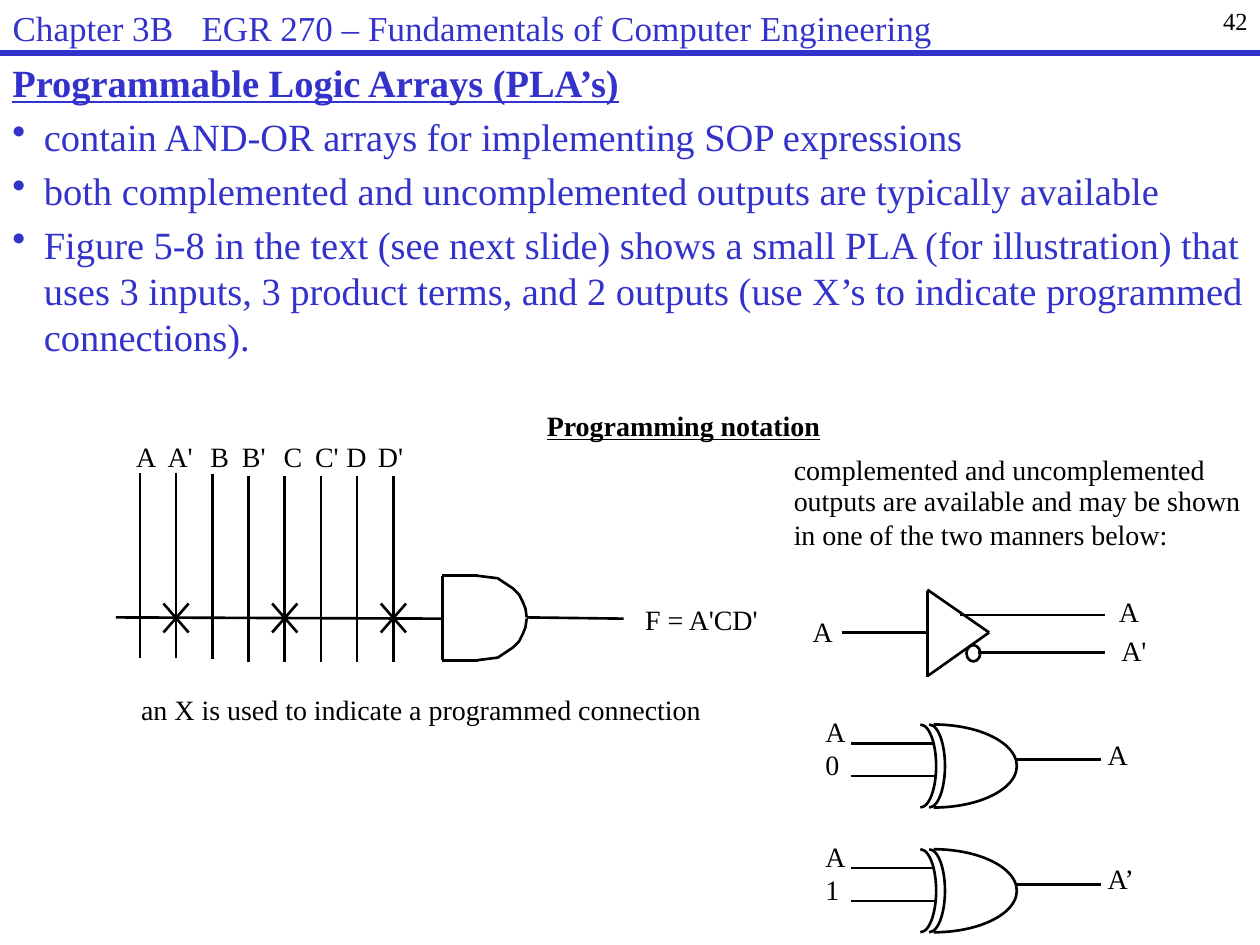
"""Build the slide on programmable logic arrays and their programming notation."""
from dataclasses import dataclass

import pptx
import pptx.dml.color
import pptx.enum.shapes
import pptx.enum.text
import pptx.oxml
import pptx.util
from pptx.util import Inches

SHAPE = pptx.enum.shapes.MSO_SHAPE
ALIGN = pptx.enum.text.PP_ALIGN


@dataclass(frozen=True)
class Theme:
    font: str = "Times New Roman"
    blue: str = "3333CC"
    black: str = "000000"
    body: int = 22
    title: int = 20
    label: int = 16
    number: int = 14
    thin: float = 1.5
    thick: float = 3


@dataclass(frozen=True)
class Label:
    text: str
    x: float
    y: float
    w: float
    strong: bool = False


@dataclass(frozen=True)
class Wire:
    x1: float
    y1: float
    x2: float
    y2: float


@dataclass(frozen=True)
class XorGate:
    top: float
    inputs: str
    output: str
    output_w: float


THEME = Theme()
BODY = [
    "Programmable Logic Arrays (PLA’s)",
    "contain AND-OR arrays for implementing SOP expressions",
    "both complemented and uncomplemented outputs are typically available",
    "Figure 5-8 in the text (see next slide) shows a small PLA (for illustration) that "
    "uses 3 inputs, 3 product terms, and 2 outputs (use X’s to indicate programmed connections).",
]
COLUMNS = [("A", 1.08, 0.16), ("A'", 1.33, 0.2), ("B", 1.67, 0.15), ("B'", 1.92, 0.19),
           ("C", 2.25, 0.15), ("C'", 2.5, 0.19), ("D", 2.75, 0.16), ("D'", 3, 0.2)]
COLUMN_TOPS = [3.75, 3.75, 3.76] + [3.78] * 5
PROGRAMMED = (1, 4, 7)
PRODUCT_Y = 4.9
LABELS = [
    Label("Programming notation", 4.34, 3.24, 2.2, True),
    Label("complemented and uncomplemented", 6.3, 3.59, 3.31),
    Label("outputs are available and may be shown\nin one of the two manners below:", 6.3, 3.84, 3.6),
    Label("F = A'CD'", 5.12, 4.78, 0.9),
    Label("an X is used to indicate a programmed connection", 1.12, 5.5, 4.52),
    Label("A", 6.45, 4.88, 0.16),
    Label("A", 8.88, 4.72, 0.16),
    Label("A'", 8.9, 5.03, 0.2),
]
AND_WIRES = [
    Wire(0.92, PRODUCT_Y, 3.51, 4.91), Wire(4.18, PRODUCT_Y, 4.95, 4.91),
    Wire(3.51, 5.24, 3.51, 4.57), Wire(3.51, 4.57, 3.79, 4.57), Wire(3.51, 5.24, 3.79, 5.24),
]
AND_CURVE = [(3.79, 4.57), (3.95, 4.59), (4.07, 4.67), (4.12, 4.72),
             (4.15, 4.78), (4.17, 4.83), (4.18, PRODUCT_Y)]
BUFFER_WIRES = [
    Wire(6.68, 5.02, 7.36, 5.02), Wire(7.36, 5.37, 7.36, 4.69), Wire(7.36, 4.68, 7.85, 5.02),
    Wire(7.37, 5.36, 7.85, 5.02), Wire(7.62, 4.88, 8.77, 4.88), Wire(7.76, 5.18, 8.77, 5.18),
]
XOR_GATES = [XorGate(5.75, "A\n0", "A", 0.16), XorGate(6.74, "A\n1", "A’", 0.21)]


def rgb(color: str) -> pptx.dml.color.RGBColor:
    """Turn a hex string into a colour."""
    return pptx.dml.color.RGBColor.from_string(color)


def style(p, size: int, color: str, strong: bool = False) -> None:
    """Format all runs of a paragraph."""
    for r in p.runs:
        r.font.name, r.font.size = THEME.font, pptx.util.Pt(size)
        r.font.color.rgb = rgb(color)
        r.font.bold = r.font.underline = strong


def set_properties(p, left: float, hanging: float, tab: float, bullet: bool = False) -> None:
    """Set indents, a tab stop and an optional bullet."""
    pPr = p._p.get_or_add_pPr()
    pPr.set("marL", str(Inches(left)))
    pPr.set("indent", str(-Inches(hanging)))
    if bullet:
        pptx.oxml.ns and pPr.append(element('<a:buChar {} char="•"/>'))
    pPr.append(element(f'<a:tabLst {{}}><a:tab pos="{Inches(tab)}" algn="l"/></a:tabLst>'))


def element(xml: str):
    """Parse a drawing element that has a slot for its namespace."""
    return pptx.oxml.parse_xml(xml.format(pptx.oxml.ns.nsdecls("a")))


def add_wire(s, wire: Wire, color: str = THEME.black, width: float = THEME.thin) -> None:
    """Draw a straight line."""
    ends = map(Inches, (wire.x1, wire.y1, wire.x2, wire.y2))
    line = s.shapes.add_connector(pptx.enum.shapes.MSO_CONNECTOR.STRAIGHT, *ends)
    line.line.color.rgb, line.line.width = rgb(color), pptx.util.Pt(width)
    line._element.spPr.append(element("<a:effectLst {}/>"))


def outline(sp) -> None:
    """Give a shape a thin black outline only."""
    sp.shadow.inherit = False
    sp.fill.background()
    sp.line.color.rgb, sp.line.width = rgb(THEME.black), pptx.util.Pt(THEME.thin)


def add_outline(s, kind, x: float, y: float, w: float, h: float, flip: bool = False) -> None:
    """Draw an unfilled preset shape."""
    sp = s.shapes.add_shape(kind, *map(Inches, (x, y, w, h)))
    outline(sp)
    if flip:
        sp._element.spPr.xfrm.set("flipV", "1")


def add_label(s, label: Label) -> None:
    """Write a diagram label without margins."""
    lines = label.text.count("\n") + 1
    tf = s.shapes.add_textbox(*map(Inches, (label.x, label.y, label.w, 0.27 * lines))).text_frame
    tf.margin_left = tf.margin_right = tf.margin_top = tf.margin_bottom = 0
    tf.word_wrap = False
    tf.auto_size = pptx.enum.text.MSO_AUTO_SIZE.SHAPE_TO_FIT_TEXT
    tf.text = label.text
    for p in tf.paragraphs:
        style(p, THEME.label, THEME.black, label.strong)


def add_header(s) -> None:
    """Place the title, the rule and the page number."""
    title = s.shapes.title
    title.left, title.top, title.width, title.height = map(Inches, (0, 0, 9.25, 0.42))
    tf = title.text_frame
    tf.text, tf.word_wrap = "Chapter 3B\tEGR 270 – Fundamentals of Computer Engineering", True
    tf.vertical_anchor = pptx.enum.text.MSO_ANCHOR.TOP
    tf.auto_size = pptx.enum.text.MSO_AUTO_SIZE.NONE
    p = tf.paragraphs[0]
    p.alignment = ALIGN.LEFT
    set_properties(p, 0, 0, 1.69)
    style(p, THEME.title, THEME.blue)
    add_wire(s, Wire(0, 0.42, 10, 0.42), THEME.blue, THEME.thick)
    tf = s.shapes.add_textbox(*map(Inches, (9.33, 0, 0.67, 0.42))).text_frame
    tf.text, tf.word_wrap = "42", True
    tf.paragraphs[0].alignment = ALIGN.RIGHT
    style(tf.paragraphs[0], THEME.number, THEME.black)


def add_body(s) -> None:
    """Write the heading and its bullets."""
    tf = s.shapes.add_textbox(*map(Inches, (0, 0.42, 10, 2.83))).text_frame
    tf.text, tf.word_wrap = "\n".join(BODY), True
    for i, p in enumerate(tf.paragraphs):
        indent = 0.25 if i else 0.19
        p.space_before = pptx.util.Pt(0.2 * THEME.body)
        set_properties(p, indent, indent, 1.25, bullet=i > 0)
        style(p, THEME.body, THEME.blue, strong=i == 0)


def add_and_array(s) -> None:
    """Draw the input columns, programmed crosses and AND gate."""
    for i, ((text, x, w), top) in enumerate(zip(COLUMNS, COLUMN_TOPS)):
        center = 1.11 + 0.2875 * i
        add_label(s, Label(text, x, 3.49, w))
        add_wire(s, Wire(center, top, center, top + 1.47))
        if i in PROGRAMMED:
            for dx in (0.1, -0.1):
                add_wire(s, Wire(center - dx, 4.79, center + dx, 5.02))
    for wire in AND_WIRES:
        add_wire(s, wire)
    for curve in (AND_CURVE, [(x, 2 * PRODUCT_Y - y + 0.01) for x, y in AND_CURVE]):
        points = [(Inches(x), Inches(y)) for x, y in curve]
        builder = s.shapes.build_freeform(*points[0])
        builder.add_line_segments(points[1:], close=False)
        outline(builder.convert_to_shape())


def add_buffer(s) -> None:
    """Draw the buffer with true and complemented outputs."""
    for wire in BUFFER_WIRES:
        add_wire(s, wire)
    add_outline(s, SHAPE.OVAL, 7.67, 5.12, 0.11, 0.13)


def add_xor(s, gate: XorGate) -> None:
    """Draw an XOR gate with its wires and labels."""
    for x, w in ((6.75, 1.32), (7.25, 0.25), (7.18, 0.25)):
        for flip in (False, True):
            add_outline(s, SHAPE.ARC, x, gate.top, w, 0.66, flip)
    for x, dy, end in ((6.75, 0.15, 7.42), (6.75, 0.41, 7.42), (8.07, 0.28, 8.74)):
        add_wire(s, Wire(x, gate.top + dy, end, gate.top + dy))
    add_label(s, Label(gate.inputs, 6.55, gate.top - 0.08, 0.16))
    add_label(s, Label(gate.output, 8.79, gate.top + 0.1, gate.output_w))


def main() -> None:
    """Build and save the slide."""
    prs = pptx.Presentation()
    prs.slide_width, prs.slide_height = Inches(10), Inches(7.5)
    s = prs.slides.add_slide(prs.slide_layouts[5])
    add_header(s)
    add_body(s)
    add_and_array(s)
    add_buffer(s)
    for gate in XOR_GATES:
        add_xor(s, gate)
    for label in LABELS:
        add_label(s, label)
    prs.save("out.pptx")


if __name__ == "__main__":
    main()
